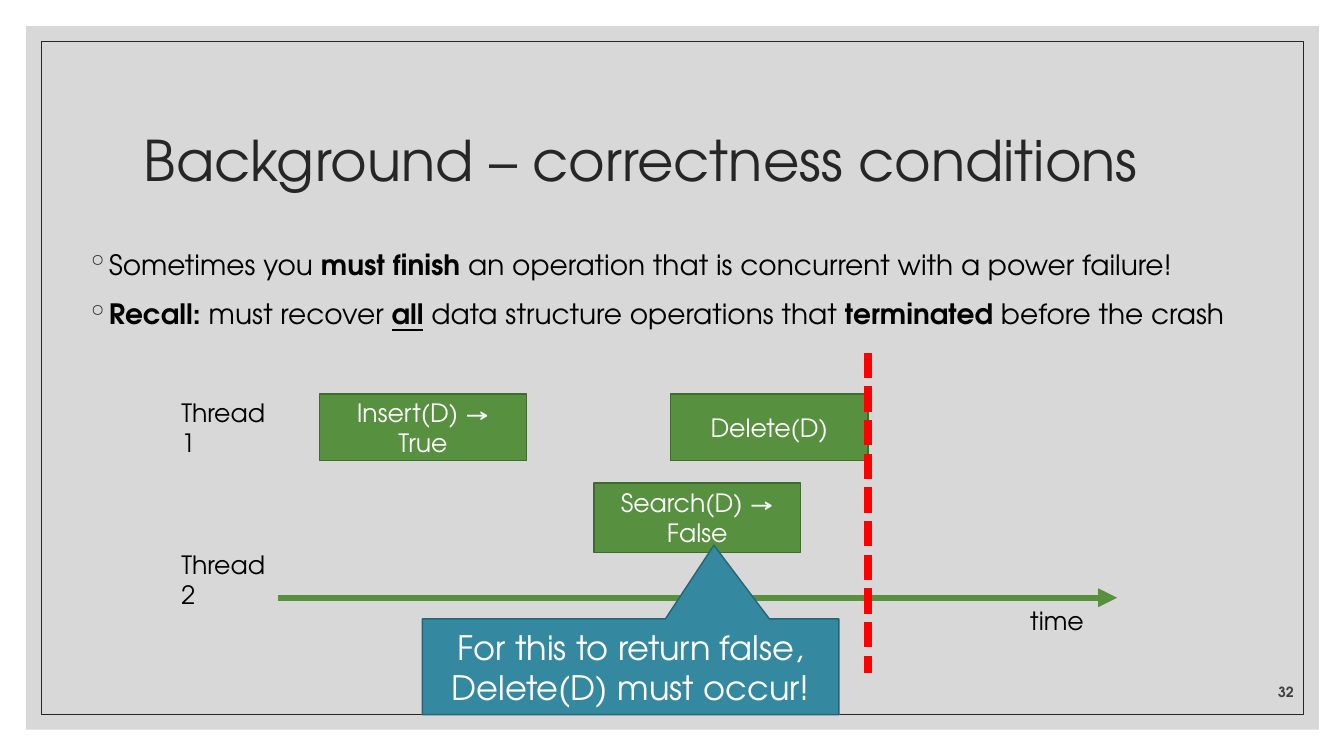
from lxml import etree
from pptx import Presentation
from pptx import util as u
from pptx.dml.color import RGBColor
from pptx.enum import dml, shapes, text
from pptx.oxml.ns import qn

FONT = "TeX Gyre Adventor"
COLOURS = {
    "panel": "BFBFBF", "frame": "262626", "title": "262626", "body": "000000",
    "number": "404040", "white": "FFFFFF", "green": "57903F", "green edge": "406B2F",
    "teal": "3488A0", "teal edge": "266576", "crash": "FF0000",
}
BOLD = {"bold": True}
BULLETS = [
    [("Sometimes you ", {}), ("must finish", BOLD),
     (" an operation that is concurrent with a power failure!", {})],
    [("Recall: ", BOLD), ("must recover ", {}), ("all", {"bold": True, "underline": True}),
     (" data structure operations that ", {}), ("terminated ", BOLD), ("before the crash", {})],
]
OPERATIONS = [
    ("Insert(D) → True", (1.47, 0.41, 2.05, 0.66)),
    ("Search(D) → False", (4.19, 1.29, 2.05, 0.69)),
    ("Delete(D)", (4.95, 0.41, 1.96, 0.66)),
]


def colour(name):
    """Return the named palette colour."""
    return RGBColor.from_string(COLOURS[name])


def inches(*lengths):
    """Convert numbers to lengths in inches."""
    return [u.Inches(length) for length in lengths]


def apply(target, values):
    """Set each named attribute on the target."""
    for name, value in values.items():
        setattr(target, name, value)


def add_span(para, words, size, tone, style=None):
    """Add one run of formatted text to a paragraph."""
    span = para.add_run()
    span.text = words
    apply(span.font, {"name": FONT, "size": u.Pt(size), **(style or {})})
    span.font.color.rgb = colour(tone)


def add_label(page, box, words, size, tone, anchor="TOP", align="LEFT", style=None, spacing=1.0):
    """Place a wrapped text box holding one paragraph."""
    label = page.shapes.add_textbox(*inches(*box))
    apply(label.text_frame, {"word_wrap": True,
                             "vertical_anchor": getattr(text.MSO_ANCHOR, anchor)})
    para = label.text_frame.paragraphs[0]
    apply(para, {"alignment": getattr(text.PP_ALIGN, align), "line_spacing": spacing})
    add_span(para, words, size, tone, style)


def add_block(page, box, kind, fill=None, edge=None, width=1):
    """Place a flat preset shape with optional fill and outline."""
    block = page.shapes.add_shape(kind, *inches(*box))
    block.shadow.inherit = False
    for part, tone in ((block.fill, fill), (block.line.fill, edge)):
        if tone:
            part.solid()
            part.fore_color.rgb = colour(tone)
        else:
            part.background()
    if edge:
        block.line.width = u.Pt(width)
    return block


def write_centred(block, words, size):
    """Write white centred text inside a shape."""
    apply(block.text_frame, {"word_wrap": True, "vertical_anchor": text.MSO_ANCHOR.MIDDLE})
    para = block.text_frame.paragraphs[0]
    para.alignment = text.PP_ALIGN.CENTER
    add_span(para, words, size, "white")


def add_rule(page, ends, tone, width):
    """Draw a straight line without a shadow."""
    rule = page.shapes.add_connector(shapes.MSO_CONNECTOR.STRAIGHT, *inches(*ends))
    rule.line.color.rgb = colour(tone)
    rule.line.width = u.Pt(width)
    etree.SubElement(rule._element.spPr, qn("a:effectLst"))
    return rule


def draw_background(page, box):
    """Draw the translucent panel and the thin frame inside it."""
    left, top, width, height = box
    rectangle = shapes.MSO_SHAPE.RECTANGLE
    panel = add_block(page, box, rectangle, fill="panel")
    tint = panel._element.spPr.find(qn("a:solidFill"))[0]
    etree.SubElement(tint, qn("a:alpha"), val="60000")
    inset = 0.15
    frame = (left + inset, top + inset, width - 2 * inset, height - 2 * inset)
    add_block(page, frame, rectangle, edge="frame", width=0.5)


def draw_bullets(page, box):
    """Write the bulleted statements."""
    body = page.shapes.add_textbox(*inches(*box)).text_frame
    body.word_wrap = True
    for index, spans in enumerate(BULLETS):
        para = body.paragraphs[0] if index == 0 else body.add_paragraph()
        apply(para, {"line_spacing": 1.1, "space_before": u.Pt(9)})
        props = para._p.get_or_add_pPr()
        props.set("marL", str(u.Inches(0.2)))
        props.set("indent", str(u.Inches(-0.2)))
        tint = etree.SubElement(props, qn("a:buClr"))
        etree.SubElement(tint, qn("a:srgbClr"), val=COLOURS["frame"])
        etree.SubElement(props, qn("a:buChar"), char="◦")
        for words, style in spans:
            add_span(para, words, 20, "body", style)


def draw_timeline(page, box):
    """Draw the threads, operations, time arrow, crash line and callout."""
    left, top, width, height = box
    for index in range(2):
        label = (left, top + 0.39 + 1.51 * index, 1.11, 0.7)
        add_label(page, label, f"Thread {index + 1}", 18, "body")

    axis = top + 2.43
    arrow = add_rule(page, (left + 1.06, axis, left + width, axis), "green", 4.5)
    outline = arrow.line._get_or_add_ln()
    etree.SubElement(outline, qn("a:tailEnd"), type="triangle")
    add_label(page, (left + 8.42, axis + 0.03, 1.27, 0.4), "time", 18, "body")

    for words, (across, down, wide, tall) in OPERATIONS:
        place = (left + across, top + down, wide, tall)
        block = add_block(page, place, shapes.MSO_SHAPE.RECTANGLE, "green", "green edge")
        write_centred(block, words, 18)

    crash = left + 6.91
    failure = add_rule(page, (crash, top, crash, top + 3.18), "crash", 6)
    failure.line.dash_style = dml.MSO_LINE.SQUARE_DOT

    place = (left + 2.49, top + height - 0.95, 4.13, 0.95)
    callout = add_block(page, place, shapes.MSO_SHAPE.RECTANGULAR_CALLOUT, "teal", "teal edge")
    callout.adjustments[0], callout.adjustments[1] = 0.2, -1.27
    write_centred(callout, "For this to return false, Delete(D) must occur!", 24)


def main():
    """Build and save the slide."""
    deck = Presentation()
    apply(deck, {"slide_width": u.Inches(13.33), "slide_height": u.Inches(7.5)})
    page = deck.slides.add_slide(deck.slide_layouts[6])
    draw_background(page, (0.26, 0.26, 12.82, 6.98))
    draw_bullets(page, (0.76, 2.37, 11.81, 4.45))
    add_label(page, (12.01, 6.6, 0.92, 0.4), "32", 10, "number", "BOTTOM", "RIGHT", BOLD)
    draw_timeline(page, (1.7, 3.5, 9.38, 3.59))
    add_label(page, (1.33, 0.87, 11, 1.5), "Background – correctness conditions", 40, "title",
              "MIDDLE", spacing=0.9)
    deck.save("out.pptx")


if __name__ == "__main__":
    main()
